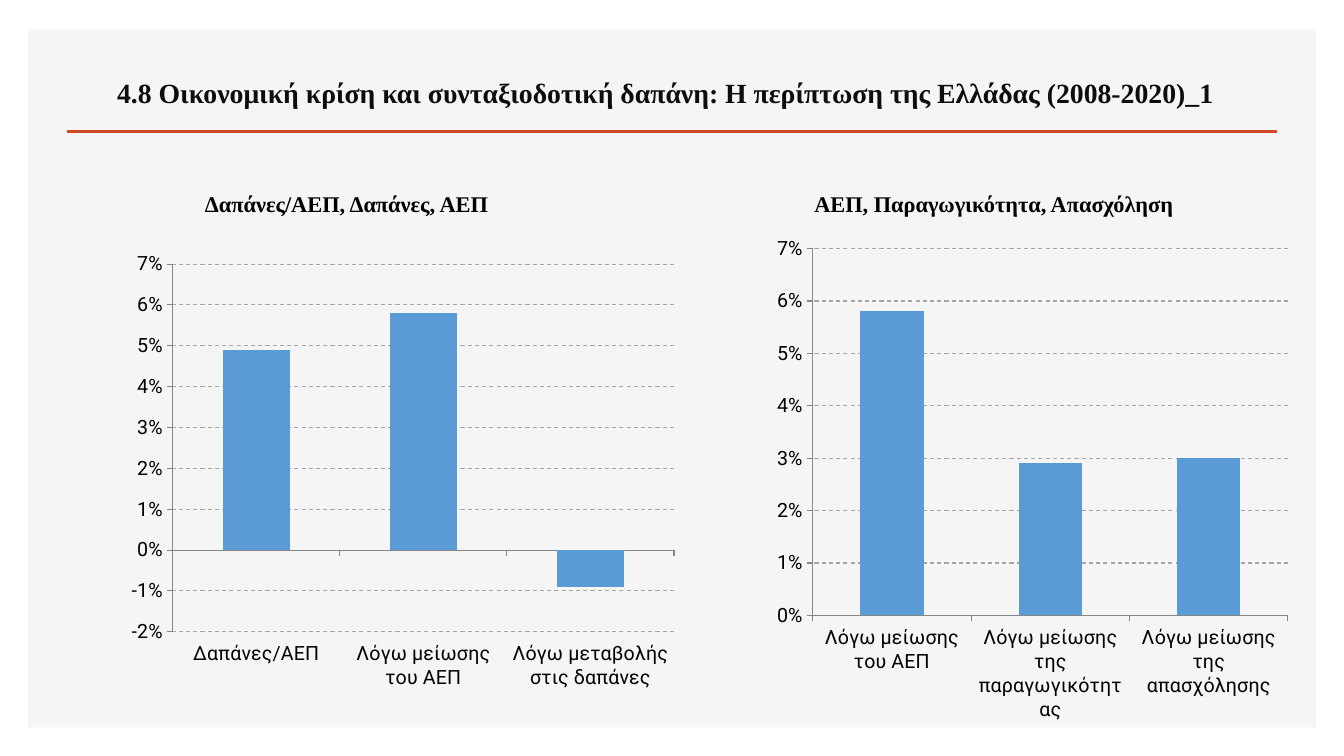
from lxml.etree import SubElement
from pptx import Presentation
from pptx.chart.data import CategoryChartData
from pptx.dml.color import RGBColor as RGB
from pptx.enum.chart import XL_CHART_TYPE as ChartType, XL_TICK_LABEL_POSITION as LabelPos, XL_TICK_MARK as Tick
from pptx.enum.dml import MSO_LINE
from pptx.enum.shapes import MSO_CONNECTOR, MSO_SHAPE
from pptx.enum.text import MSO_ANCHOR, PP_ALIGN
from pptx.oxml import parse_xml
from pptx.oxml.ns import nsdecls, qn
from pptx.util import Cm, Pt

COLORS = {"panel": "F5F5F5", "rule": "D24726", "title": "0D0D0D", "text": "000000",
          "bar": "5B9BD5", "grid": "A6A6A6", "axis": "868686"}
SERIF, SANS = "Times New Roman", "Roboto"

SLIDE_TITLE = "4.8 Οικονομική κρίση και συνταξιοδοτική δαπάνη: Η περίπτωση της Ελλάδας (2008-2020)_1"
SLIDE_TITLE_BOX = (1.45, 1.22, 30.63, 1.65)
PANEL_BOX = (0.71, 0.73, 32.46, 17.6)
RULE = (1.68, 3.31, 32.18, 3.31)
PLOT = {"x": 0.153, "y": 0.04, "w": 0.806, "h": 0.746}

COMPARISONS = [
    {"heading": "Δαπάνες/ΑΕΠ, Δαπάνες, ΑΕΠ",
     "heading_box": (1.57, 3.82, 14.33, 1.78),
     "chart_box": (1.96, 6.16, 15.67, 12.42),
     "changes": {"Δαπάνες/ΑΕΠ": 0.049, "Λόγω μείωσης του ΑΕΠ": 0.058,
                 "Λόγω μεταβολής στις δαπάνες": -0.009},
     "lowest": -0.02},
    {"heading": "ΑΕΠ, Παραγωγικότητα, Απασχόληση",
     "heading_box": (17.88, 3.82, 14.33, 1.78),
     "chart_box": (18.21, 5.77, 14.86, 12.42),
     "changes": {"Λόγω μείωσης του ΑΕΠ": 0.058, "Λόγω μείωσης της παραγωγικότητας": 0.029,
                 "Λόγω μείωσης της απασχόλησης": 0.03},
     "lowest": 0},
]


def color(name):
    return RGB.from_string(COLORS[name])


def lengths(box):
    return [Cm(value) for value in box]


def apply(target, formats):
    for name, value in formats.items():
        setattr(target, name, value)


def write_heading(heading, text, box, size, tint):
    apply(heading, dict(zip(("left", "top", "width", "height"), lengths(box))))
    frame = heading.text_frame
    apply(frame, {"text": text, "word_wrap": True, "vertical_anchor": MSO_ANCHOR.BOTTOM})
    paragraph = frame.paragraphs[0]
    paragraph.alignment = PP_ALIGN.CENTER
    font = paragraph.runs[0].font
    apply(font, {"name": SERIF, "size": Pt(size), "bold": True})
    font.color.rgb = color(tint)


def place_plot(chart):
    plot_area = chart._chartSpace.chart.plotArea
    for old in plot_area.findall(qn("c:layout")):
        plot_area.remove(old)
    edges = "".join(f'<c:{edge}Mode val="edge"/>' for edge in "xy")
    sizes = "".join(f'<c:{side} val="{share}"/>' for side, share in PLOT.items())
    plot_area.insert(0, parse_xml(
        f'<c:layout {nsdecls("c")}><c:manualLayout><c:layoutTarget val="inner"/>'
        f'{edges}{sizes}</c:manualLayout></c:layout>'))


def keep_labels_level(axis):
    body = axis._element.find(qn("c:txPr")).find(qn("a:bodyPr"))
    body.set("rot", "0")
    body.set("vert", "horz")


def add_changes_chart(shapes, comparison):
    data = CategoryChartData(number_format="0%")
    data.categories = comparison["changes"].keys()
    data.add_series("Series 1", comparison["changes"].values())
    chart = shapes.add_chart(ChartType.COLUMN_CLUSTERED, *lengths(comparison["chart_box"]), data).chart
    apply(chart, {"has_legend": False, "has_title": False})
    apply(chart.font, {"name": SANS, "size": Pt(18)})
    chart.font.color.rgb = color("text")

    bars = chart.plots[0]
    apply(bars, {"gap_width": 150, "vary_by_categories": False})
    bars.series[0].invert_if_negative = False
    bars.series[0].format.fill.solid()
    bars.series[0].format.fill.fore_color.rgb = color("bar")

    for axis in (chart.category_axis, chart.value_axis):
        apply(axis, {"major_tick_mark": Tick.OUTSIDE, "minor_tick_mark": Tick.NONE,
                     "tick_label_position": LabelPos.LOW})
        apply(axis.tick_labels.font, {"name": SANS, "size": Pt(14)})
        axis.tick_labels.font.color.rgb = color("text")
        keep_labels_level(axis)
        axis.format.line.width = Pt(0.75)
        axis.format.line.color.rgb = color("axis")

    percent = chart.value_axis
    apply(percent, {"minimum_scale": comparison["lowest"], "maximum_scale": 0.07,
                    "major_unit": 0.01, "has_major_gridlines": True})
    apply(percent.tick_labels, {"number_format": "0%", "number_format_is_linked": False})
    grid = percent.major_gridlines.format.line
    grid.color.rgb = color("grid")
    apply(grid, {"width": Pt(0.75), "dash_style": MSO_LINE.DASH})
    place_plot(chart)


def main():
    deck = Presentation()
    apply(deck, {"slide_width": Cm(33.87), "slide_height": Cm(19.05)})
    slide = deck.slides.add_slide(deck.slide_layouts[5])
    shapes = slide.shapes
    first_heading = shapes.title

    panel = shapes.add_shape(MSO_SHAPE.RECTANGLE, *lengths(PANEL_BOX))
    panel.shadow.inherit = False
    panel.fill.solid()
    panel.fill.fore_color.rgb = color("panel")
    panel.line.fill.background()
    shapes._spTree.insert(2, panel._element)

    rule = shapes.add_connector(MSO_CONNECTOR.STRAIGHT, *lengths(RULE))
    rule.line.color.rgb = color("rule")
    rule.line.width = Pt(2)
    SubElement(rule._element.spPr, qn("a:effectLst"))
    shapes._spTree.insert(3, rule._element)

    second_heading = shapes.add_textbox(0, 0, 0, 0)
    for heading, comparison in zip((first_heading, second_heading), COMPARISONS):
        write_heading(heading, comparison["heading"], comparison["heading_box"], 16, "text")
    write_heading(shapes.add_textbox(0, 0, 0, 0), SLIDE_TITLE, SLIDE_TITLE_BOX, 19.8, "title")

    for comparison in COMPARISONS:
        add_changes_chart(shapes, comparison)
    deck.save("out.pptx")


if __name__ == "__main__":
    main()
